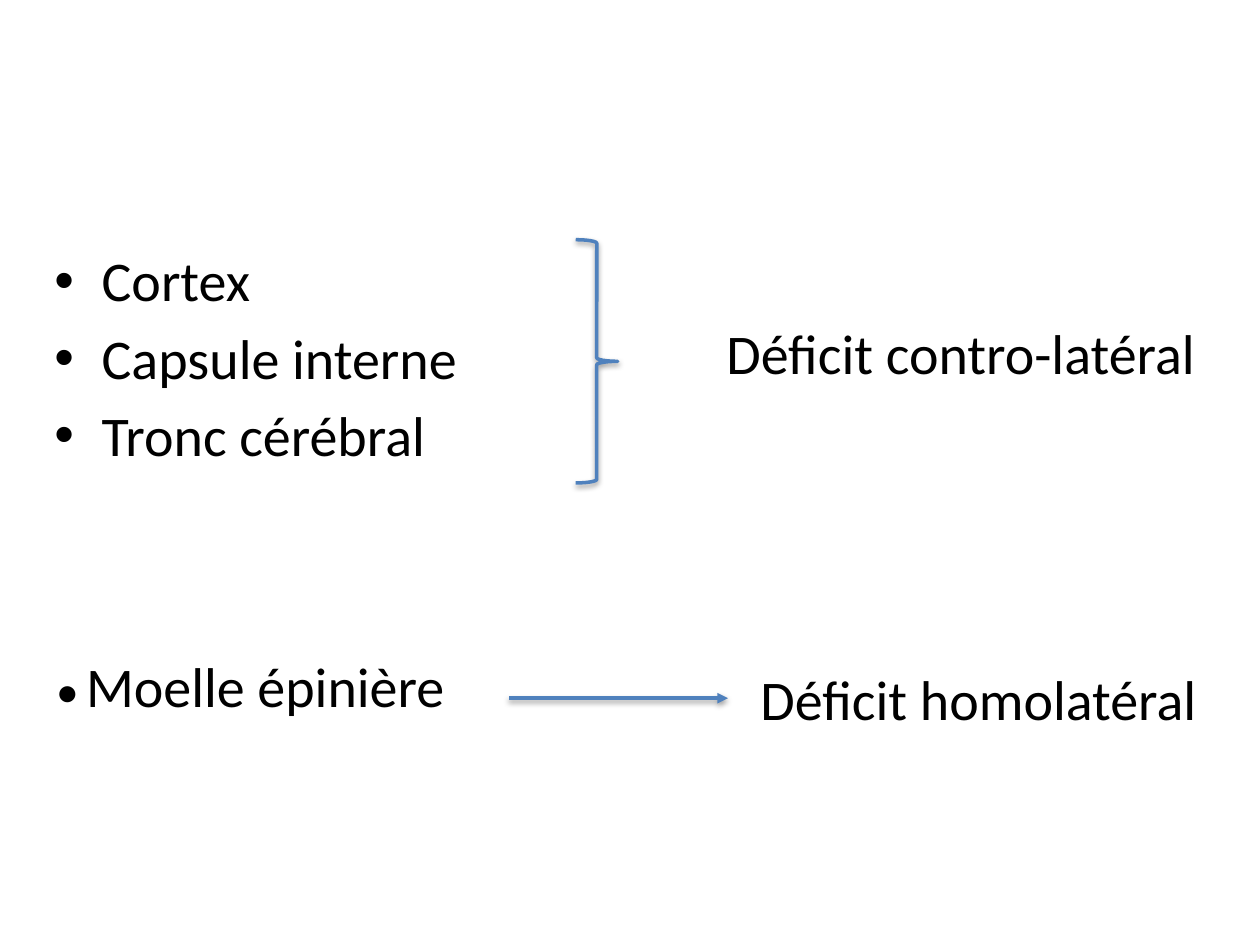
from lxml.etree import SubElement
from pptx import Presentation
from pptx.dml.color import RGBColor
from pptx.enum.shapes import MSO_CONNECTOR, MSO_SHAPE
from pptx.enum.text import MSO_AUTO_SIZE
from pptx.oxml import parse_xml
from pptx.oxml.ns import nsdecls, qn
from pptx.util import Pt

HUES = {"text": "000000", "line": "4F81BD", "shade": "000000"}


def write(para, text, size=32, font="Calibri", hue="text"):
    run = para.add_run()
    run.text = text
    run.font.size = Pt(size)
    run.font.name = font
    run.font.color.rgb = RGBColor.from_string(HUES[hue])


class Deck:
    """Hold the style and the current slide."""

    def __init__(self, wide, high):
        self.file = Presentation()
        self.file.slide_width, self.file.slide_height = Pt(wide), Pt(high)
        self.slide = self.file.slides.add_slide(self.file.slide_layouts[6])

    def frame(self, box, wrap):
        shape = self.slide.shapes.add_textbox(*map(Pt, box))
        shape.text_frame.word_wrap = wrap
        return shape.text_frame

    def label(self, box, *parts):
        frame = self.frame(box, False)
        frame.auto_size = MSO_AUTO_SIZE.SHAPE_TO_FIT_TEXT
        for text, size in parts:
            write(frame.paragraphs[0], text, size=size)

    def bullets(self, box, items, indent=27):
        frame = self.frame(box, True)
        for num, item in enumerate(items):
            para = frame.add_paragraph() if num else frame.paragraphs[0]
            para.space_before = Pt(5.8)
            write(para, item)
            props = para._p.get_or_add_pPr()
            props.set("marL", str(Pt(indent)))
            props.set("indent", str(-Pt(indent)))
            SubElement(props, qn("a:buFont"), typeface="Arial")
            SubElement(props, qn("a:buChar"), char="•")

    def stroke(self, shape, head=False):
        shape.line.color.rgb = RGBColor.from_string(HUES["line"])
        shape.line.width = Pt(2)
        if head:
            SubElement(shape.line._get_or_add_ln(), qn("a:tailEnd"), type="triangle")
        shape._element.spPr.append(parse_xml(
            f'<a:effectLst {nsdecls("a")}><a:outerShdw blurRad="{Pt(3.15)}" '
            f'dist="{Pt(1.57)}" dir="5400000" rotWithShape="0">'
            f'<a:srgbClr val="{HUES["shade"]}"><a:alpha val="38000"/></a:srgbClr>'
            '</a:outerShdw></a:effectLst>'))

    def brace(self, box):
        shape = self.slide.shapes.add_shape(MSO_SHAPE.RIGHT_BRACE, *map(Pt, box))
        shape.fill.background()
        self.stroke(shape)

    def arrow(self, *ends):
        shape = self.slide.shapes.add_connector(MSO_CONNECTOR.STRAIGHT, *map(Pt, ends))
        self.stroke(shape, head=True)


def main():
    deck = Deck(720, 540)
    deck.bullets((24, 137, 659, 453), ["Cortex", "Capsule interne", "Tronc cérébral"])
    deck.brace((329, 137, 24, 139))
    deck.label((408, 178.5, 287, 46), ("Déficit contro-latéral", 32))
    deck.label((25, 368.5, 242, 46), ("•", 26), (" ", 18), ("Moelle épinière", 32))
    deck.arrow(291, 399, 416, 399)
    deck.label((427.5, 376, 268, 46), ("Déficit homolatéral", 32))
    deck.file.save("out.pptx")


if __name__ == "__main__":
    main()
